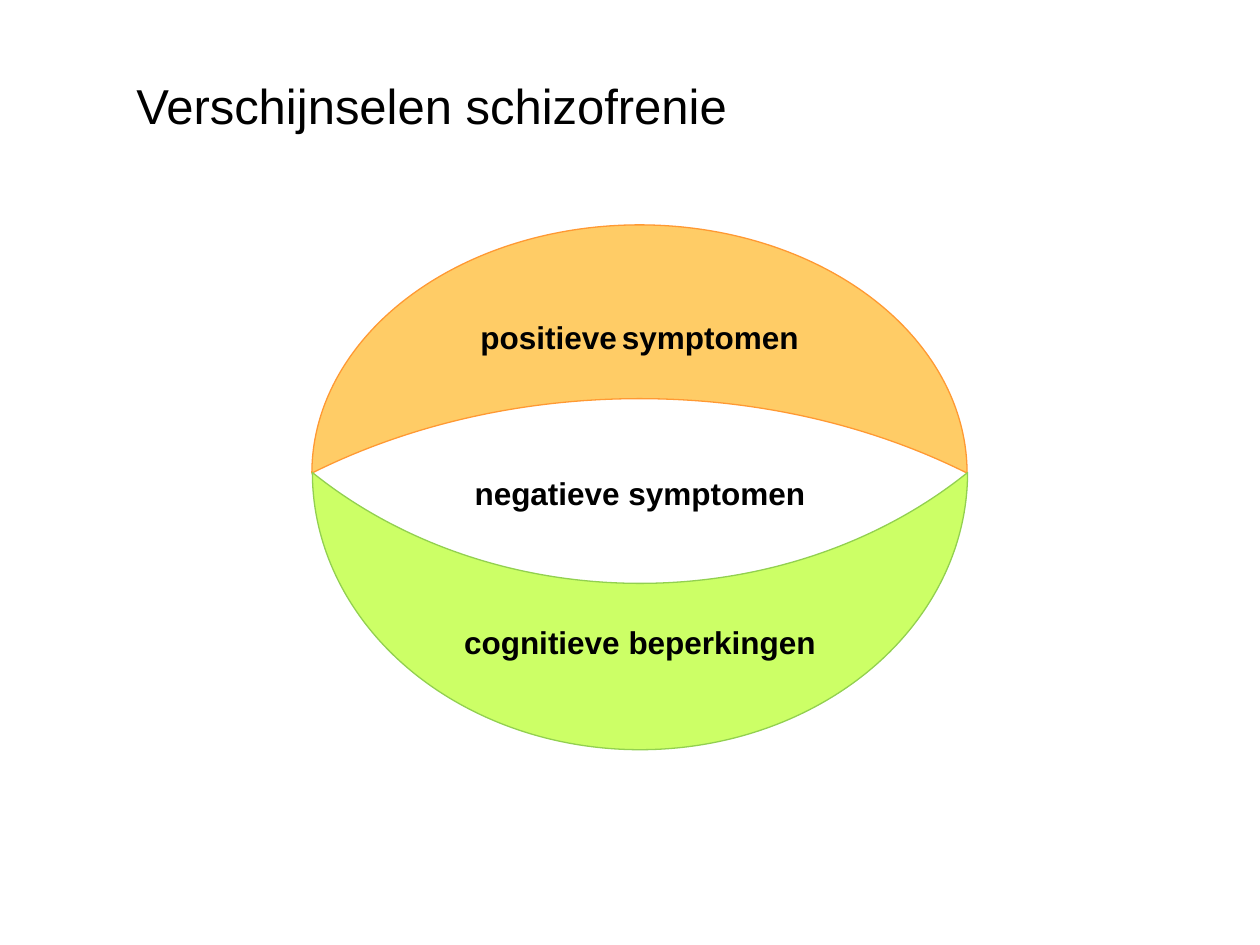
from pptx import Presentation
from pptx.dml.color import RGBColor
from pptx.enum import shapes, text
from pptx.util import Inches, Pt

COLORS = {
    "white": "FFFFFF",
    "black": "000000",
    "orange": "FFCC66",
    "orange_line": "FF9933",
    "green": "CCFF66",
    "green_line": "92D050",
}


def rgb(name):
    return RGBColor.from_string(COLORS[name])


def style_font(font, size, bold):
    font.name = "Arial"
    font.size = Pt(size)
    font.bold = bold
    font.color.rgb = rgb("black")


def write_text(sp, runs, size, bold):
    tf = sp.text_frame
    tf.vertical_anchor = text.MSO_ANCHOR.MIDDLE
    p = tf.paragraphs[0]
    p.alignment = text.PP_ALIGN.CENTER
    for words, run_size in runs:
        r = p.add_run()
        r.text = words
        if run_size:
            r.font.size = Pt(run_size)
    style_font(p.font, size, bold)


def add_title(s, words):
    sp = s.shapes.title
    sp.left, sp.top = Inches(0.75), Inches(0.44)
    sp.width, sp.height = Inches(5.35), Inches(0.79)
    sp.fill.solid()
    sp.fill.fore_color.rgb = rgb("white")
    write_text(sp, [(words, None)], 28, False)


def add_part(s, kind, box, adjustment, fill, line, runs):
    sp = s.shapes.add_shape(kind, *[Inches(v) for v in box])
    sp.shadow.inherit = False
    sp.adjustments[0] = adjustment
    sp.fill.solid()
    sp.fill.fore_color.rgb = rgb(fill)
    if line:
        sp.line.color.rgb = rgb(line)
        sp.line.width = Pt(0.75)
    else:
        sp.line.fill.background()
    write_text(sp, runs, 18, True)
    return sp


def add_moon(s, box, adjustment, color, runs, flipped=False):
    sp = add_part(s, shapes.MSO_SHAPE.MOON, box, adjustment, color, color + "_line", runs)
    sp.rotation = 90
    if flipped:
        sp._element.spPr.xfrm.set("flipH", "1")
    sp.text_frame.word_wrap = False
    sp.text_frame._txBody.bodyPr.set("vert", "vert270")


def main():
    prs = Presentation()
    prs.slide_width, prs.slide_height = Inches(10), Inches(7.5)
    s = prs.slides.add_slide(prs.slide_layouts[5])
    add_title(s, "Verschijnselen schizofrenie")
    add_part(s, shapes.MSO_SHAPE.CAN, (2.48, 3.2, 5.2, 1.42), 0.01, "white", None,
             [("negatieve symptomen", None)])
    add_moon(s, (4.09, 0.17, 1.97, 5.2), 0.7, "orange",
             [("positieve", None), (" ", 10), ("symptomen", None)])
    add_moon(s, (3.98, 2.25, 2.2, 5.2), 0.6, "green",
             [("cognitieve beperkingen", None)], flipped=True)
    prs.save("out.pptx")


if __name__ == "__main__":
    main()
